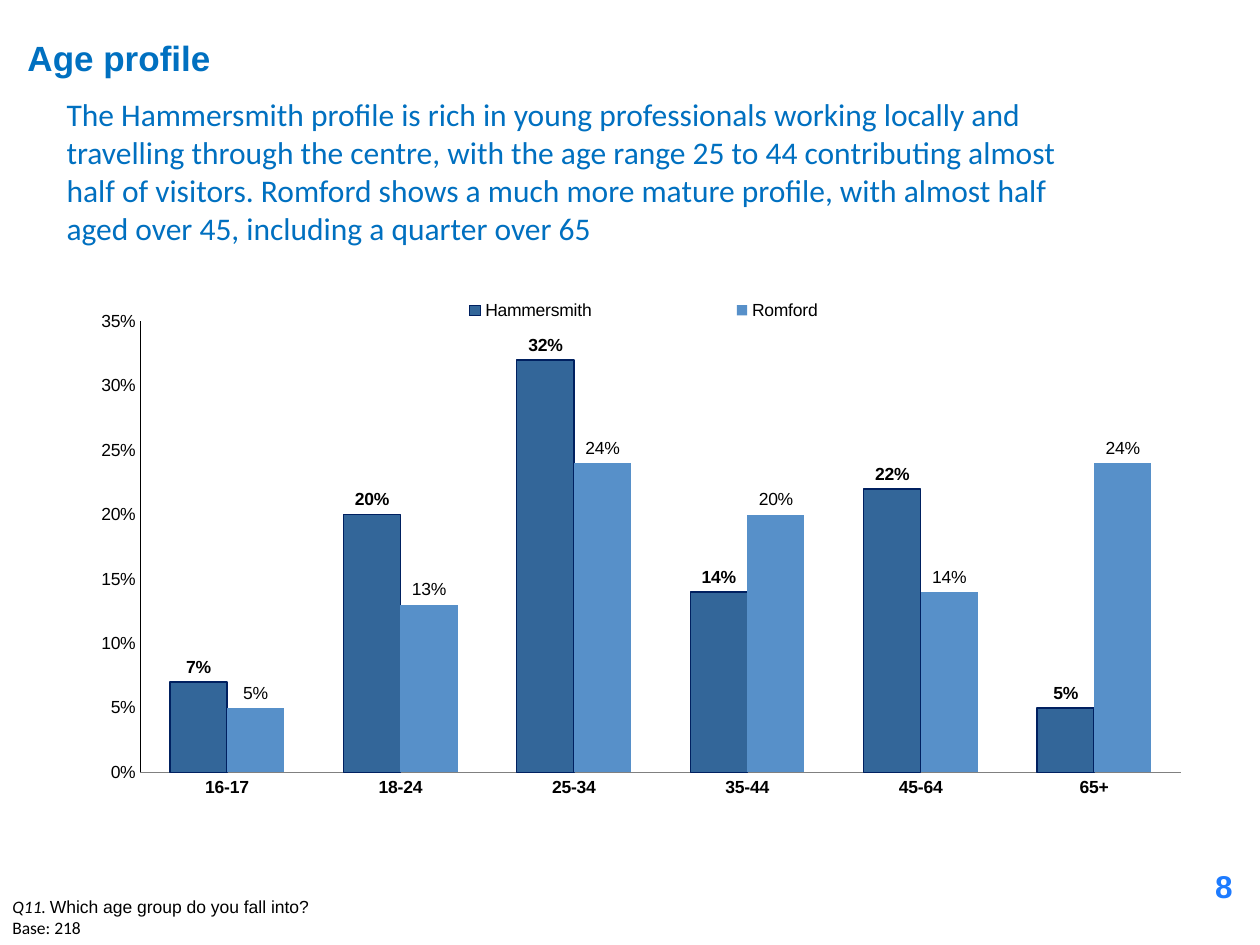
import pptx
import pptx.chart.data
import pptx.dml.color
import pptx.enum.chart
import pptx.enum.text
import pptx.oxml
import pptx.oxml.ns
import pptx.util

BLACK = pptx.dml.color.RGBColor(0x00, 0x00, 0x00)
GREY = pptx.dml.color.RGBColor(0x80, 0x80, 0x80)
HEADING_BLUE = pptx.dml.color.RGBColor(0x00, 0x70, 0xC0)
NUMBER_BLUE = pptx.dml.color.RGBColor(0x1D, 0x7B, 0xFF)
DARK_BAR = pptx.dml.color.RGBColor(0x33, 0x66, 0x99)
LIGHT_BAR = pptx.dml.color.RGBColor(0x57, 0x90, 0xC9)
NAVY = pptx.dml.color.RGBColor(0x00, 0x20, 0x60)

COLUMNS, ROWS = 100, 75  # square grid cells of a tenth of an inch
PERCENT = "0%"
AGES = ["16-17", "18-24", "25-34", "35-44", "45-64", "65+"]
# name, values, fill, outline, bold labels
CENTRES = [
    ("Hammersmith", [0.07, 0.20, 0.32, 0.14, 0.22, 0.05], DARK_BAR, NAVY, True),
    ("Romford", [0.05, 0.13, 0.24, 0.20, 0.14, 0.24], LIGHT_BAR, None, False),
]
SUMMARY = (
    "The Hammersmith profile is rich in young professionals working locally "
    "and travelling through the centre, with the age range 25 to 44 "
    "contributing almost half of visitors. Romford shows a much more mature "
    "profile, with almost half aged over 45, including a quarter over 65"
)


class SlideBuilder:
    """Holds the style and the current slide."""

    def __init__(self, deck):
        self.slide = deck.slides.add_slide(deck.slide_layouts[6])
        self.cell_width = deck.slide_width / COLUMNS
        self.cell_height = deck.slide_height / ROWS

    def place(self, column, row, columns, rows):
        return (
            int(column * self.cell_width),
            int(row * self.cell_height),
            int(columns * self.cell_width),
            int(rows * self.cell_height),
        )

    def style(self, font, size, color, name="Arial", bold=False):
        font.size = pptx.util.Pt(size)
        font.name = name
        font.bold = bold
        font.color.rgb = color

    def text(self, area, paragraphs, size, color, name="Arial", bold=False,
             align=None, middle=False):
        """Each paragraph is a list of (text, font name, italic) spans."""
        frame = self.slide.shapes.add_textbox(*self.place(*area)).text_frame
        frame.word_wrap = True
        if middle:
            frame.vertical_anchor = pptx.enum.text.MSO_ANCHOR.MIDDLE
        for index, spans in enumerate(paragraphs):
            para = frame.add_paragraph() if index else frame.paragraphs[0]
            para.alignment = align
            self.style(para.font, size, color, name, bold)
            for words, span_font, italic in spans:
                span = para.add_run()
                span.text = words
                if span_font != name:
                    span.font.name = span_font
                if italic:
                    span.font.italic = True

    def line_of_text(self, area, words, size, color, name="Arial", **options):
        self.text(area, [[(words, name, False)]], size, color, name, **options)

    def layout(self, parent, position, x, y, width, height, inner=False):
        """Fix a chart part at shares of the chart's size."""
        target = '<c:layoutTarget val="inner"/>' if inner else ""
        for old in parent.xpath("./c:layout"):
            parent.remove(old)
        parent.insert(position, pptx.oxml.parse_xml(
            f"<c:layout {pptx.oxml.ns.nsdecls('c')}><c:manualLayout>{target}"
            '<c:xMode val="edge"/><c:yMode val="edge"/>'
            f'<c:x val="{x}"/><c:y val="{y}"/>'
            f'<c:w val="{width}"/><c:h val="{height}"/>'
            "</c:manualLayout></c:layout>"))

    def column_chart(self, area, categories, rows, top, step):
        data = pptx.chart.data.CategoryChartData(number_format=PERCENT)
        data.categories = categories
        for name, values, *_ in rows:
            data.add_series(name, values)
        chart = self.slide.shapes.add_chart(
            pptx.enum.chart.XL_CHART_TYPE.COLUMN_CLUSTERED,
            *self.place(*area), data).chart
        chart.has_title = False
        self.style(chart.font, 10, BLACK)

        # Axes
        for axis, color in ((chart.category_axis, GREY), (chart.value_axis, BLACK)):
            axis.has_major_gridlines = False
            axis.major_tick_mark = pptx.enum.chart.XL_TICK_MARK.NONE
            axis.minor_tick_mark = pptx.enum.chart.XL_TICK_MARK.NONE
            axis.format.line.color.rgb = color
            axis.format.line.width = pptx.util.Pt(0.75)
        self.style(chart.category_axis.tick_labels.font, 10, BLACK, bold=True)
        chart.value_axis.minimum_scale = 0
        chart.value_axis.maximum_scale = top
        chart.value_axis.major_unit = step
        chart.value_axis.tick_labels.number_format = PERCENT
        chart.value_axis.tick_labels.number_format_is_linked = False

        # Bars and their labels
        plot = chart.plots[0]
        plot.gap_width = 104
        plot.overlap = 0
        plot.vary_by_categories = False
        for series, (_, _, fill, outline, bold) in zip(plot.series, rows):
            series.format.fill.solid()
            series.format.fill.fore_color.rgb = fill
            if outline is None:
                series.format.line.fill.background()
            else:
                series.format.line.color.rgb = outline
                series.format.line.width = pptx.util.Pt(0.75)
            labels = series.data_labels
            labels.show_value = True
            labels.number_format = PERCENT
            labels.number_format_is_linked = False
            labels.position = pptx.enum.chart.XL_LABEL_POSITION.OUTSIDE_END
            self.style(labels.font, 10, BLACK, bold=bold)

        # Legend and plot positions
        chart.has_legend = True
        chart.legend.position = pptx.enum.chart.XL_LEGEND_POSITION.TOP
        chart.legend.include_in_layout = False
        self.style(chart.legend.font, 10, BLACK)
        legend = chart.element.xpath(".//c:legend")[0]
        self.layout(legend, 1, 0.22, 0.01, 0.56, 0.04)
        plot_area = chart.element.xpath(".//c:plotArea")[0]
        self.layout(plot_area, 0, 0.05, 0.05, 0.93, 0.81, inner=True)


def main():
    deck = pptx.Presentation()
    deck.slide_width = pptx.util.Inches(10)
    deck.slide_height = pptx.util.Inches(7.5)
    page = SlideBuilder(deck)

    # Page number
    page.line_of_text((78, 68.3, 20.8, 5), "8", 18, NUMBER_BLUE, bold=True,
                      align=pptx.enum.text.PP_ALIGN.RIGHT)
    # Title and summary
    page.line_of_text((1.2, 1.6, 85, 5.9), "Age profile", 20, HEADING_BLUE,
                      bold=True, middle=True)
    page.line_of_text((4.3, 10.8, 82.4, 5.5), SUMMARY, 18, HEADING_BLUE,
                      name="Calibri", middle=True)
    # Survey question and base
    page.text((0, 70.6, 84, 4.4), [
        [("Q11. ", "Calibri", True),
         ("Which age group do you fall into?", "Arial", False)],
        [("Base: 218", "Calibri", False)],
    ], 10, BLACK, name="Calibri")
    # Age chart
    page.column_chart((6.7, 23.3, 88.8, 44.2), AGES, CENTRES, 0.35, 0.05)

    deck.save("out.pptx")


if __name__ == "__main__":
    main()
